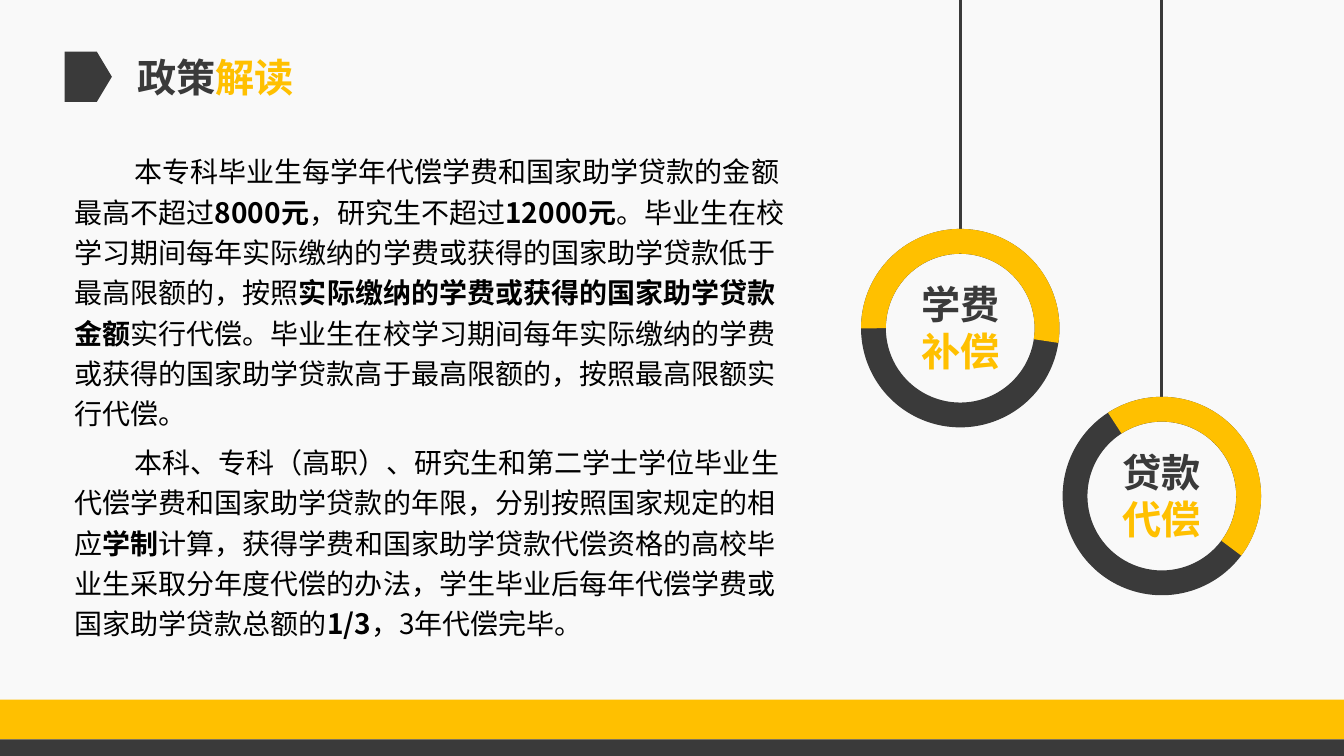
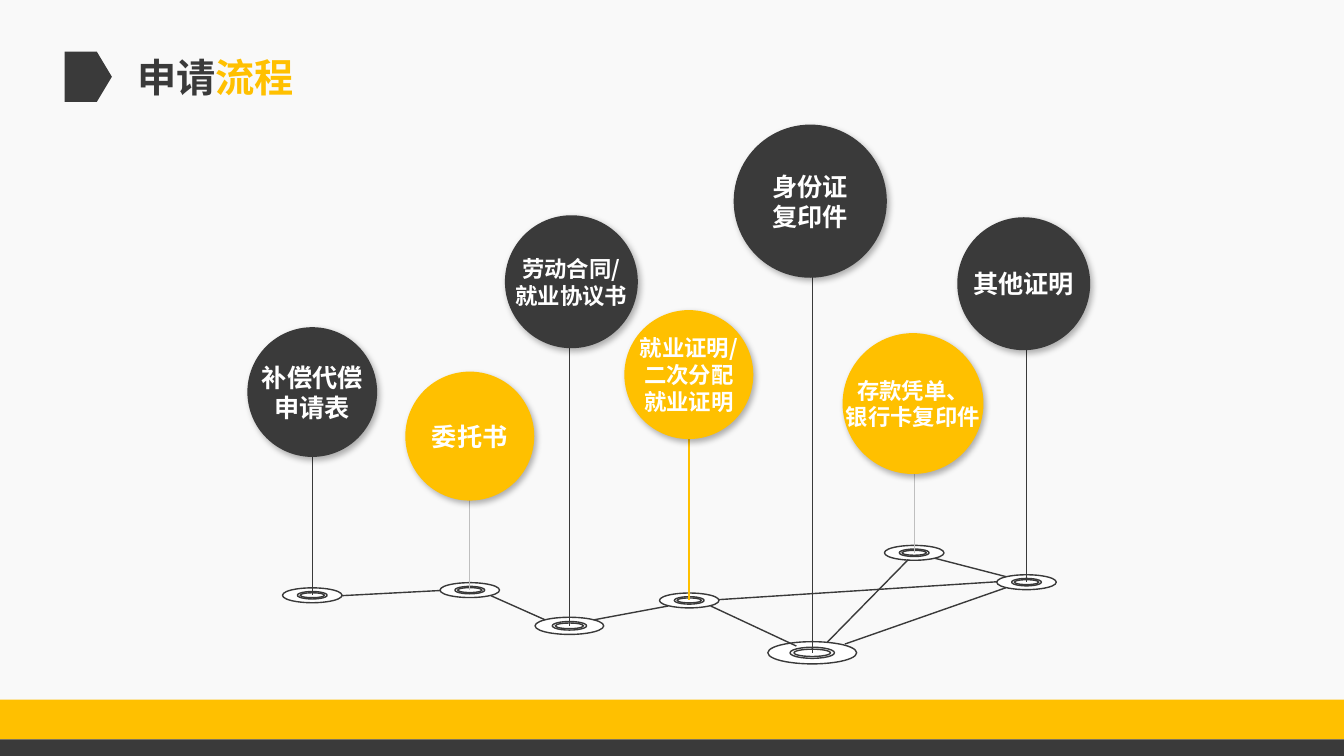
from lxml import etree
from pptx import Presentation
from pptx.dml.color import RGBColor
from pptx.enum.shapes import MSO_CONNECTOR, MSO_SHAPE
from pptx.enum.text import MSO_ANCHOR, PP_ALIGN
from pptx.oxml.ns import qn
from pptx.util import Cm, Pt

OVAL, RECT, TAG = MSO_SHAPE.OVAL, MSO_SHAPE.RECTANGLE, MSO_SHAPE.PENTAGON
DONUT, ARC = MSO_SHAPE.DONUT, MSO_SHAPE.BLOCK_ARC
LINE = MSO_CONNECTOR.STRAIGHT
CENTER, LEFT = PP_ALIGN.CENTER, PP_ALIGN.LEFT
MIDDLE, TOP = MSO_ANCHOR.MIDDLE, MSO_ANCHOR.TOP

FONT = "Noto Sans CJK SC"
DARK, GOLD, PALE = "3A3A3A", "FFC000", "F9F9F9"
WHITE, BLACK, GREY = "FFFFFF", "000000", "BFBFBF"
WIDE, HIGH = 33.87, 19.05


def rgb(code):
    return RGBColor.from_string(code)


def write(shape, paras, size=28, color=DARK, bold=True, align=CENTER, anchor=TOP,
          wrap=True, inset=None, indent=0, space=None, after=0):
    """Fill a shape with paragraphs, each a list of (text, changes) runs."""
    frame = shape.text_frame
    frame.word_wrap, frame.vertical_anchor = wrap, anchor
    if inset is not None:
        frame.margin_left = frame.margin_right = Cm(inset)
        frame.margin_top = frame.margin_bottom = Cm(inset)
    for i, runs in enumerate(paras):
        para = frame.add_paragraph() if i else frame.paragraphs[0]
        para.alignment, para.space_after = align, Pt(after)
        if space:
            para.line_spacing = space
        if indent:
            para._p.get_or_add_pPr().set("indent", str(Cm(indent)))
        for text, style in runs:
            run = para.add_run()
            run.text = text
            run.font.size, run.font.name = Pt(size), FONT
            run.font.bold = style.get("bold", bold)
            run.font.color.rgb = rgb(style.get("color", color))
            east = etree.SubElement(run._r.get_or_add_rPr(), qn("a:ea"))
            east.set("typeface", FONT)


class Deck:
    def __init__(self):
        self.prs = Presentation()
        self.prs.slide_width, self.prs.slide_height = Cm(WIDE), Cm(HIGH)
        fill = self.prs.slide_master.background.fill
        fill.solid()
        fill.fore_color.rgb = rgb(PALE)
        self.slide = None

    def page(self, dark, gold):
        self.slide = self.prs.slides.add_slide(self.prs.slide_layouts[6])
        self.shape(RECT, 0, 17.63, WIDE, 1, GOLD)
        self.shape(RECT, 0, 18.63, WIDE, HIGH - 18.63, DARK)
        self.shape(TAG, 1.63, 1.3, 1.19, 1.27, DARK, adj=[0.32])
        self.text(1.63, 1.22, 7.62, 1.45, [[(dark, {}), (gold, {"color": GOLD})]])

    def shape(self, kind, x, y, w, h, fill, line=None, adj=(), turn=0):
        item = self.slide.shapes.add_shape(kind, Cm(x), Cm(y), Cm(w), Cm(h))
        item.shadow.inherit = False
        item.fill.solid()
        item.fill.fore_color.rgb = rgb(fill)
        if line:
            item.line.color.rgb, item.line.width = rgb(line), Pt(1)
        else:
            item.line.fill.background()
        for i, value in enumerate(adj):
            item.adjustments[i] = value
        item.rotation = turn
        return item

    def oval(self, x, y, w, h, fill, line=None):
        return self.shape(OVAL, x - w / 2, y - h / 2, w, h, fill, line)

    def text(self, x, y, w, h, paras, **style):
        box = self.slide.shapes.add_textbox(Cm(x), Cm(y), Cm(w), Cm(h))
        write(box, paras, **style)

    def line(self, x1, y1, x2, y2, color=DARK, width=1.0):
        item = self.slide.shapes.add_connector(LINE, Cm(x1), Cm(y1), Cm(x2), Cm(y2))
        item.line.color.rgb, item.line.width = rgb(color), Pt(width)
        etree.SubElement(item._element.spPr, qn("a:effectLst"))

    def ring(self, x, y, top, end, start, turn):
        size = 5
        left = x - size / 2
        self.line(x, 0, x, y, width=2.25)
        self.shape(DONUT, left, y, size, size, DARK, adj=[0.125])
        self.shape(ARC, left, y, size, size, GOLD, adj=[107.95, start, 0.125], turn=turn)
        self.text(x - 1.49, y + 1.17, 2.98, 2.64, [[(top, {})], [(end, {"color": GOLD})]])

    def node(self, x, y, w):
        h = w / 4
        self.oval(x, y, w, h, WHITE, DARK)
        self.oval(x, y, w * 0.5, h * 0.5, PALE, DARK)
        self.oval(x, y, w * 0.41, h * 0.33, WHITE, DARK)

    def bubble(self, x, y, size, fill, points, rows):
        item = self.oval(x, y, size, size, fill)
        write(item, [[(row, {})] for row in rows], size=points, color=WHITE,
              anchor=MIDDLE, wrap=False, inset=0)
        cast = etree.SubElement(item._element.spPr.find(qn("a:effectLst")), qn("a:outerShdw"))
        for key, value in (("blurRad", Pt(4.5)), ("dist", Pt(2.6)), ("dir", 53 * 60000)):
            cast.set(key, str(value))
        tint = etree.SubElement(cast, qn("a:srgbClr"), val=BLACK)
        etree.SubElement(tint, qn("a:alpha"), val="30000")


def policy(deck):
    strong = {"bold": True}
    deck.page("政策", "解读")
    deck.ring(24.2, 5.77, "学费", "补偿", 5.13, 0)
    deck.ring(29.28, 10, "贷款", "代偿", 203.81, 57.2)
    deck.text(1.63, 3.61, 18.52, 12.78, [
        [("本专科毕业生每学年代偿学费和国家助学贷款的金额最高不超过", {}),
         ("8000元", strong), ("，研究生不超过", {}), ("12000元", strong),
         ("。毕业生在校学习期间每年实际缴纳的学费或获得的国家助学贷款低于最高限额的，按照", {}),
         ("实际缴纳的学费或获得的国家助学贷款金额", strong),
         ("实行代偿。毕业生在校学习期间每年实际缴纳的学费或获得的国家助学贷款"
          "高于最高限额的，按照最高限额实行代偿。", {})],
        [("本科、专科（高职）、研究生和第二学士学位毕业生代偿学费和国家助学贷款的年限，"
          "分别按照国家规定的相应", {}),
         ("学制", strong),
         ("计算，获得学费和国家助学贷款代偿资格的高校毕业生采取分年度代偿的办法，"
          "学生毕业后每年代偿学费或国家助学贷款总额的", {}),
         ("1/3", strong), ("，3年代偿完毕。", {})],
    ], size=20, color=BLACK, bold=False, align=LEFT, indent=1.5, space=1.2, after=6)


def process(deck):
    deck.page("申请", "流程")
    steps = [
        (7.87, 15, 1.5, 7.87, 9.88, 3.27, DARK, 18, ["补偿代偿", "申请表"], DARK, 1),
        (11.84, 14.87, 1.5, 11.84, 10.99, 3.25, GOLD, 18, ["委托书"], GREY, 0.5),
        (14.35, 15.77, 1.73, 14.4, 7.1, 3.35, DARK, 16, ["劳动合同/", "就业协议书"], DARK, 1),
        (17.37, 15.13, 1.5, 17.36, 9.44, 3.25, GOLD, 16,
         ["就业证明/", "二次分配", "就业证明"], GOLD, 1.5),
        (20.47, 16.45, 2.24, 20.42, 5.07, 3.86, DARK, 18, ["身份证", "复印件"], DARK, 1),
        (23.04, 13.93, 1.5, 23.01, 10.17, 3.55, GOLD, 16, ["存款凭单、", "银行卡复印件"], GREY, 0.5),
        (25.87, 14.67, 1.5, 25.8, 7.15, 3.35, DARK, 18, ["其他证明"], DARK, 1),
    ]
    links = [
        (8.61, 15.01, 11.1, 14.88), (12.37, 15.01, 13.74, 15.62),
        (14.96, 15.62, 16.84, 15.27), (17.91, 15.27, 20.07, 16.28),
        (21.29, 16.23, 25.35, 14.81), (25.35, 14.53, 23.57, 14.07),
        (18.11, 15.11, 25.12, 14.66), (20.85, 16.18, 22.89, 14.1),
    ]
    for x, y, width, *_ in steps:
        deck.node(x, y, width)
    for link in links:
        deck.line(*link)
    for x, y, _, left, top, size, fill, points, rows, stem, weight in steps:
        deck.line(x, top, x, y, stem, weight)
        deck.bubble(left, top, size, fill, points, rows)


def main():
    deck = Deck()
    policy(deck)
    process(deck)
    deck.prs.save("out.pptx")


if __name__ == "__main__":
    main()
